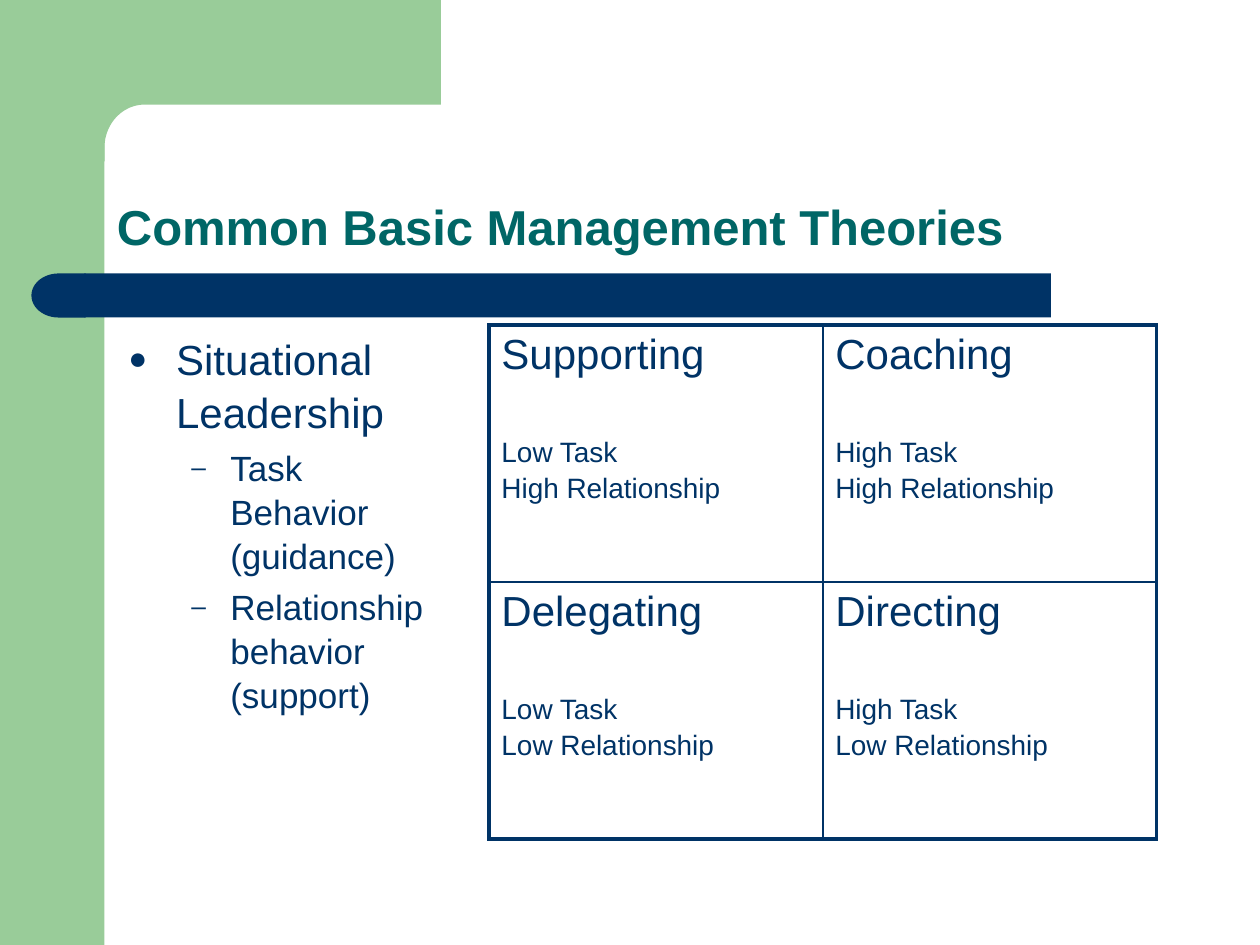
import math

from lxml import etree
from pptx import Presentation
from pptx.dml.color import RGBColor
from pptx.enum import shapes, text
from pptx.oxml import ns
from pptx.util import Inches, Pt

# Content
TITLE = "Common Basic Management Theories"
BULLETS = [
    (0, "Situational Leadership"),
    (1, "Task Behavior (guidance)"),
    (1, "Relationship behavior (support)"),
]
STYLES = [
    {"char": "●", "size": 24, "margin": 0.38, "hanging": 0.38},
    {"char": "–", "size": 20, "margin": 0.81, "hanging": 0.31},
]
QUADRANTS = [
    [("Supporting", "Low Task", "High Relationship"),
     ("Coaching", "High Task", "High Relationship")],
    [("Delegating", "Low Task", "Low Relationship"),
     ("Directing", "High Task", "Low Relationship")],
]
COLORS = {"green": "99CC99", "navy": "003366", "teal": "006666"}
FONT = "Arial"
OUTER, INNER = 2.25, 1

presentation = Presentation()
presentation.slide_width, presentation.slide_height = Inches(10), Inches(7.5)
slide = presentation.slides.add_slide(presentation.slide_layouts[6])


def paint(shape, color):
    shape.shadow.inherit = False
    shape.fill.solid()
    shape.fill.fore_color.rgb = RGBColor.from_string(COLORS[color])
    shape.line.fill.background()


def add_block(kind, color, left, top, width, height):
    shape = slide.shapes.add_shape(
        kind, Inches(left), Inches(top), Inches(width), Inches(height))
    paint(shape, color)
    return shape


def add_text_box(left, top, width, height, anchor):
    box = slide.shapes.add_textbox(
        Inches(left), Inches(top), Inches(width), Inches(height))
    box.text_frame.word_wrap = True
    box.text_frame.vertical_anchor = anchor
    return box.text_frame


def write(frame, words, first=False, size=24, color="navy", bold=False,
          before=0, spacing=1.0):
    paragraph = frame.paragraphs[0] if first else frame.add_paragraph()
    paragraph.space_before = Pt(before)
    paragraph.line_spacing = spacing
    run = paragraph.add_run()
    run.text = words
    run.font.name, run.font.size, run.font.bold = FONT, Pt(size), bold
    run.font.color.rgb = RGBColor.from_string(COLORS[color])
    return paragraph


def add_bullet(paragraph, level, char, margin, hanging):
    paragraph.level = level
    properties = paragraph._p.get_or_add_pPr()
    properties.set("marL", str(Inches(margin)))
    properties.set("indent", str(-Inches(hanging)))
    color = etree.SubElement(properties, ns.qn("a:buClr"))
    etree.SubElement(color, ns.qn("a:srgbClr"), val=COLORS["navy"])
    etree.SubElement(properties, ns.qn("a:buSzPct"), val="75000")
    etree.SubElement(properties, ns.qn("a:buFont"), typeface=FONT)
    etree.SubElement(properties, ns.qn("a:buChar"), char=char)


def set_borders(cell, widths):
    properties = cell._tc.get_or_add_tcPr()
    for index, (side, width) in enumerate(widths.items()):
        line = etree.Element(ns.qn(f"a:ln{side}"), w=str(Pt(width)))
        fill = etree.SubElement(line, ns.qn("a:solidFill"))
        etree.SubElement(fill, ns.qn("a:srgbClr"), val=COLORS["navy"])
        properties.insert(index, line)


# Green frame: side band and top block with a rounded inner corner
add_block(shapes.MSO_SHAPE.RECTANGLE, "green", 0, 0, 0.83, 7.5)
STEPS = 24
angles = [math.pi / 2 * step / STEPS for step in range(STEPS + 1)]
corner = [(1.15 - 0.32 * math.sin(angle), 1.17 - 0.34 * math.cos(angle))
          for angle in angles]
outline = [(3.5, 0), (3.5, 0.83), *corner, (0.83, 1.28), (0.5, 1.28), (0.5, 0)]
points = [(Inches(x), Inches(y)) for x, y in outline]
builder = slide.shapes.build_freeform(*points[0])
builder.add_line_segments(points[1:], close=True)
paint(builder.convert_to_shape(), "green")

# Navy bar with a rounded left end
add_block(shapes.MSO_SHAPE.RECTANGLE, "navy", 0.67, 2.17, 7.67, 0.35)
bar_end = add_block(shapes.MSO_SHAPE.FLOWCHART_DELAY, "navy",
                    0.25, 2.17, 0.43, 0.35)
bar_end._element.spPr.find(ns.qn("a:xfrm")).set("flipH", "1")

# Title
title = add_text_box(0.83, 0.83, 8.67, 1.25, text.MSO_ANCHOR.BOTTOM)
write(title, TITLE, first=True, size=28, color="teal", bold=True, spacing=0.9)

# Bullets
body = add_text_box(0.92, 2.58, 2.73, 4.07, text.MSO_ANCHOR.TOP)
for index, (level, words) in enumerate(BULLETS):
    style = STYLES[level]
    bullet = write(body, words, first=index == 0, size=style["size"],
                   before=style["size"] * 0.2, spacing=1.05)
    add_bullet(bullet, level, style["char"], style["margin"], style["hanging"])

# Leadership quadrants
table = slide.shapes.add_table(
    2, 2, Inches(3.88), Inches(2.58), Inches(5.3), Inches(4.08)).table
table.first_row = table.horz_banding = False
for row, quadrants in enumerate(QUADRANTS):
    for column, (heading, task, relationship) in enumerate(quadrants):
        cell = table.cell(row, column)
        cell.fill.background()
        set_borders(cell, {
            "L": INNER if column else OUTER,
            "R": OUTER if column else INNER,
            "T": INNER if row else OUTER,
            "B": OUTER if row else INNER,
        })
        write(cell.text_frame, heading, first=True)
        write(cell.text_frame, task, size=16, before=34)
        write(cell.text_frame, relationship, size=16, before=2.5)

presentation.save("out.pptx")
